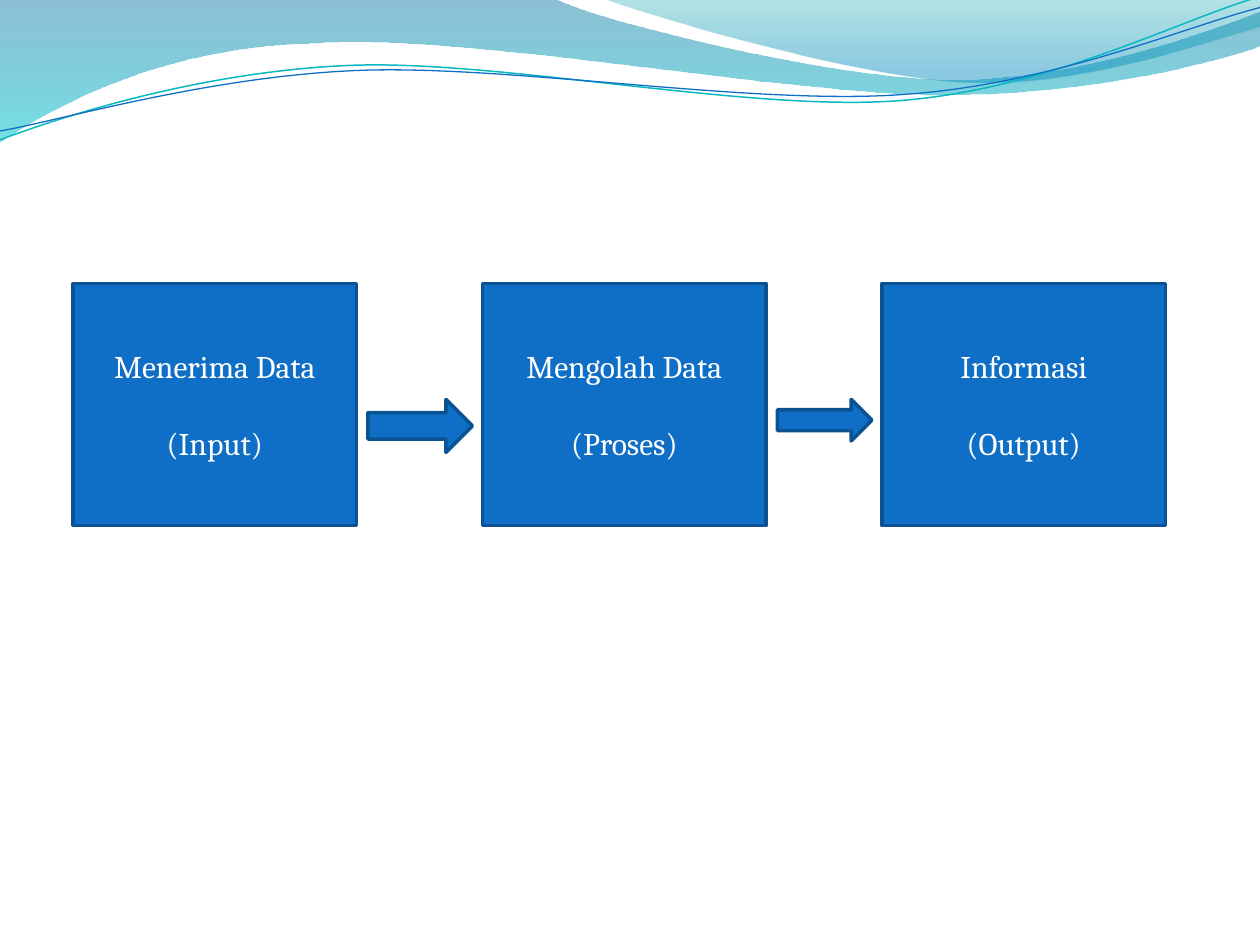
from pptx import Presentation
from pptx.dml.color import RGBColor
from pptx.enum.shapes import MSO_SHAPE
from pptx.enum.text import MSO_ANCHOR, PP_ALIGN
from pptx.oxml.ns import qn
from pptx.oxml.xmlchemy import OxmlElement
from pptx.util import Inches, Pt

RECT, ARROW = MSO_SHAPE.RECTANGLE, MSO_SHAPE.RIGHT_ARROW
MIDDLE, CENTER = MSO_ANCHOR.MIDDLE, PP_ALIGN.CENTER

BLUE = RGBColor(0x0F, 0x6F, 0xC6)
DARK_BLUE = RGBColor(0x0B, 0x52, 0x92)
TEAL = RGBColor(0x0A, 0xB8, 0xBF)
WHITE = RGBColor(0xFF, 0xFF, 0xFF)
WAVE_BLUE = RGBColor(0x00, 0x74, 0xA1)
WAVE_CYAN = RGBColor(0x00, 0xC6, 0xCF)
CREST_TEAL = RGBColor(0x00, 0xA1, 0xA9)
CREST_BLUE = RGBColor(0x00, 0x8B, 0xBF)

# Each segment lists its points after the start: one for a line, three for a cubic curve.
WAVE = [
    [(4.4, -0.01)],
    [(4.76, 0.17), (6.64, 0.63), (7.58, 0.63)],
    [(8.53, 0.63), (9.58, 0.26), (10, 0.09)],
    [(10.01, 0.36)],
    [(9.83, 0.44), (8.7, 0.76), (7.46, 0.75)],
    [(6.22, 0.75), (3.82, 0.28), (2.57, 0.34)],
    [(1.29, 0.36), (0.46, 0.83), (-0.01, 1.13)],
]
CREST = [
    [(5.09, 0.11), (6.82, 0.62), (7.69, 0.65)],
    [(8.56, 0.69), (9.61, 0.32), (10, 0.21)],
    [(10, 0)],
]
TEAL_LINE = [
    [(0.48, 0.93), (1.58, 0.57), (2.77, 0.52)],
    [(3.95, 0.47), (5.93, 0.89), (7.13, 0.8)],
    [(8.33, 0.71), (9.38, 0.15), (9.98, -0.02)],
]
BLUE_LINE = [
    [(0.47, 0.96), (1.64, 0.61), (2.83, 0.56)],
    [(4.03, 0.51), (5.97, 0.84), (7.17, 0.75)],
    [(8.36, 0.67), (9.41, 0.21), (10, 0.06)],
]
STEPS = [
    (0.58, "Menerima Data", "(Input)"),
    (3.83, "Mengolah Data", "(Proses)"),
    (7, "Informasi", "(Output)"),
]
ARROWS = [(2.92, 0.83, 0.42), (6.17, 0.75, 0.33)]


def add_outline(slide, start, segments, close):
    """Add a freeform, joining each three-point segment into one cubic curve."""
    points = [(Inches(x), Inches(y)) for seg in segments for x, y in seg]
    builder = slide.shapes.build_freeform(Inches(start[0]), Inches(start[1]))
    builder.add_line_segments(points, close=close)
    sp = builder.convert_to_shape()
    sp.shadow.inherit = False

    lines = iter(list(sp._element.iter(qn("a:lnTo"))))
    for seg in segments:
        parts = [next(lines) for _ in seg]
        if len(parts) == 3:
            curve = OxmlElement("a:cubicBezTo")
            parts[0].addprevious(curve)
            for part in parts:
                curve.append(part[0])
                part.getparent().remove(part)
    return sp


def add_wave(slide, start, segments, stops):
    """Add a closed shape with a downward gradient of (position, colour, opacity %)."""
    sp = add_outline(slide, start, segments, True)
    sp.line.fill.background()
    sp.fill.gradient()
    sp.fill.gradient_angle = 270
    for stop, (position, color, _) in zip(sp.fill.gradient_stops, stops):
        stop.position = position
        stop.color.rgb = color
    for clr, (_, _, opacity) in zip(sp._element.iter(qn("a:srgbClr")), stops):
        alpha = OxmlElement("a:alpha")
        alpha.set("val", str(opacity * 1000))
        clr.append(alpha)


def add_curve(slide, start, segments, color, width):
    sp = add_outline(slide, start, segments, False)
    sp.fill.background()
    sp.line.color.rgb = color
    sp.line.width = Pt(width)


def add_block(slide, kind, left, top, width, height):
    sp = slide.shapes.add_shape(
        kind, Inches(left), Inches(top), Inches(width), Inches(height))
    sp.shadow.inherit = False
    sp.fill.solid()
    sp.fill.fore_color.rgb = BLUE
    sp.line.color.rgb = DARK_BLUE
    sp.line.width = Pt(2)
    return sp


def add_step(slide, left, title, role):
    tf = add_block(slide, RECT, left, 2.25, 2.25, 1.92).text_frame
    tf.vertical_anchor = MIDDLE
    tf.text = f"{title}\n{role}"
    for p in tf.paragraphs:
        p.alignment = CENTER
        p.font.name = "Cambria"
        p.font.size = Pt(18)
        p.font.color.rgb = WHITE
    tf.paragraphs[1].space_before = Pt(22)


def main():
    prs = Presentation()
    prs.slide_width, prs.slide_height = Inches(10), Inches(7.5)
    slide = prs.slides.add_slide(prs.slide_layouts[6])

    add_wave(slide, (0, 0), WAVE, [(0, WAVE_BLUE, 45), (1, WAVE_CYAN, 55)])
    add_wave(slide, (4.79, -0.01), CREST, [(0, CREST_TEAL, 30), (0.8, CREST_BLUE, 45)])
    add_curve(slide, (0, 1.11), TEAL_LINE, TEAL, 0.85)
    add_curve(slide, (0, 1.04), BLUE_LINE, BLUE, 0.75)

    for step in STEPS:
        add_step(slide, *step)
    for left, width, height in ARROWS:
        add_block(slide, ARROW, left, 3.17, width, height)

    prs.save("out.pptx")


if __name__ == "__main__":
    main()
